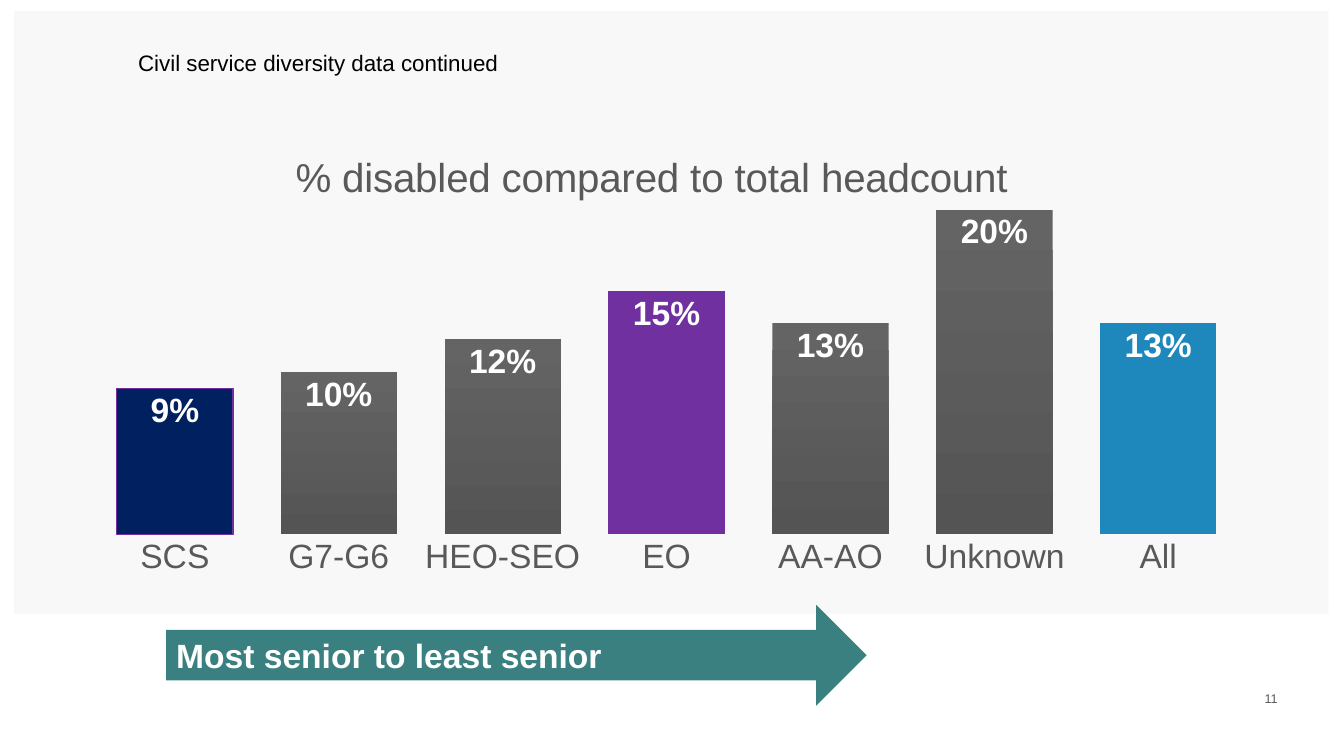
from lxml import etree
from pptx import Presentation
from pptx.chart.data import CategoryChartData
from pptx.dml.color import RGBColor
from pptx.enum.chart import XL_CHART_TYPE, XL_LABEL_POSITION, XL_TICK_MARK
from pptx.enum.shapes import MSO_SHAPE
from pptx.enum.text import MSO_ANCHOR, PP_ALIGN
from pptx.oxml.ns import qn
from pptx.util import Cm, Pt

COLUMN = XL_CHART_TYPE.COLUMN_CLUSTERED
IN_END = XL_LABEL_POSITION.INSIDE_END
NO_TICK = XL_TICK_MARK.NONE
RECT, ARROW = MSO_SHAPE.RECTANGLE, MSO_SHAPE.RIGHT_ARROW
TOP, MIDDLE = MSO_ANCHOR.TOP, MSO_ANCHOR.MIDDLE
LEFT, RIGHT = PP_ALIGN.LEFT, PP_ALIGN.RIGHT

BLACK = RGBColor(0x00, 0x00, 0x00)
WHITE = RGBColor(0xFF, 0xFF, 0xFF)
GREY = RGBColor(0x59, 0x59, 0x59)
PANEL = RGBColor(0x3F, 0x3F, 0x3F)
LIGHT = RGBColor(0x64, 0x64, 0x64)
DARK = RGBColor(0x54, 0x54, 0x54)
NAVY = RGBColor(0x00, 0x20, 0x60)
PURPLE = RGBColor(0x70, 0x30, 0xA0)
BLUE = RGBColor(0x1E, 0x88, 0xBD)
TEAL = RGBColor(0x3A, 0x80, 0x81)

HEAD = "% disabled compared to total headcount"
GRADES = {"SCS": 0.09, "G7-G6": 0.10, "HEO-SEO": 0.12, "EO": 0.15,
          "AA-AO": 0.13, "Unknown": 0.20, "All": 0.13}
ACCENTS = {"SCS": NAVY, "EO": PURPLE, "All": BLUE}


def style(font, size, color, bold=False):
    """Set the face, size, colour and weight of a font."""
    font.name, font.size, font.bold = "Arial", Pt(size), bold
    font.color.rgb = color


def write(shape, text, size, color, bold=False, align=LEFT, anchor=TOP, inset=None):
    """Write one styled run into a shape."""
    frame = shape.text_frame
    frame.word_wrap = True
    frame.vertical_anchor = anchor
    if inset is not None:
        frame.margin_left = frame.margin_right = Cm(inset)
        frame.margin_top = frame.margin_bottom = Cm(inset)
    para = frame.paragraphs[0]
    para.alignment = align
    run = para.add_run()
    run.text = text
    style(run.font, size, color, bold)


def block(slide, kind, box, color):
    """Add a flat shape without line or shadow."""
    shape = slide.shapes.add_shape(kind, *map(Cm, box))
    shape.shadow.inherit = False
    shape.fill.solid()
    shape.fill.fore_color.rgb = color
    shape.line.fill.background()
    return shape


def panel(slide, box):
    """Lay a faint grey panel behind everything else."""
    shape = block(slide, RECT, box, PANEL)
    tint = next(shape._element.iter(qn("a:srgbClr")))
    etree.SubElement(tint, qn("a:alpha"), val="3000")
    slide.shapes._spTree.insert(2, shape._element)


def title(slide, box):
    """Move the title placeholder and fill it."""
    shape = slide.shapes.title
    shape.left, shape.top, shape.width, shape.height = map(Cm, box)
    write(shape, "Civil service diversity data continued", 16, BLACK, inset=0.33)


def layout(node, index, **spot):
    """Give a chart part a manual layout in fractions of the chart."""
    old = node.find(qn("c:layout"))
    if old is not None:
        node.remove(old)
    new = etree.Element(qn("c:layout"))
    manual = etree.SubElement(new, qn("c:manualLayout"))
    for key, value in spot.items():
        etree.SubElement(manual, qn("c:" + key), val=str(value))
    node.insert(index, new)


def heading(chart):
    """Set the chart title over the plot."""
    chart.has_title = True
    label = chart.chart_title
    run = label.text_frame.paragraphs[0].add_run()
    run.text = HEAD
    style(run.font, 28.8, GREY)
    layout(label._element, 1, xMode="edge", yMode="edge", x=0.19, y=0.05)
    label._element.find(qn("c:overlay")).set("val", "1")


def axes(chart):
    """Hide the value axis and leave plain grade names."""
    value = chart.value_axis
    value.visible = value.has_major_gridlines = False
    value.minimum_scale, value.maximum_scale = 0, 0.25
    grade = chart.category_axis
    grade.major_tick_mark = grade.minor_tick_mark = NO_TICK
    grade.format.line.fill.background()
    style(grade.tick_labels.font, 24, GREY)


def bars(plot):
    """Colour the columns and label them."""
    plot.gap_width = 41
    plot.vary_by_categories = False
    series = plot.series[0]
    fill = series.format.fill
    fill.gradient()
    fill.gradient_angle = 270
    for stop, color in zip(fill.gradient_stops, (LIGHT, DARK)):
        stop.color.rgb = color
    for index, grade in enumerate(GRADES):
        if grade in ACCENTS:
            fill = series.points[index].format.fill
            fill.solid()
            fill.fore_color.rgb = ACCENTS[grade]
    edge = series.points[0].format.line
    edge.color.rgb, edge.width = PURPLE, Pt(0.75)
    labels = series.data_labels
    labels.show_value = True
    labels.position = IN_END
    labels.number_format, labels.number_format_is_linked = "0%", False
    style(labels.font, 24, WHITE, True)


def graph(slide, box):
    """Chart the disabled share of each grade."""
    data = CategoryChartData(number_format="0%")
    data.categories = list(GRADES)
    data.add_series(HEAD, list(GRADES.values()))
    chart = slide.shapes.add_chart(COLUMN, *map(Cm, box), data).chart
    chart.has_legend = False
    style(chart.font, 24, BLACK)
    heading(chart)
    axes(chart)
    bars(chart.plots[0])
    area = next(chart._chartSpace.iter(qn("c:plotArea")))
    layout(area, 0, layoutTarget="inner", xMode="edge", yMode="edge",
           x=0.03, y=0.014, w=0.94, h=0.87)


def arrow(slide, box):
    """Draw the seniority arrow."""
    shape = block(slide, ARROW, box, TEAL)
    write(shape, "Most senior to least senior", 24, WHITE, True, anchor=MIDDLE)


def number(slide, box):
    """Add the page number."""
    shape = slide.shapes.add_textbox(*map(Cm, box))
    write(shape, "11", 9, GREY, align=RIGHT, inset=0)


def main():
    """Build and save the slide."""
    deck = Presentation()
    deck.slide_width, deck.slide_height = Cm(33.87), Cm(19.05)
    slide = deck.slides.add_slide(deck.slide_layouts[5])
    panel(slide, (0.36, 0.28, 33.12, 15.19))
    title(slide, (3.15, 0.91, 20.57, 1.09))
    graph(slide, (1.42, 3.07, 30.76, 11.76))
    arrow(slide, (4.19, 15.24, 17.65, 2.54))
    number(slide, (31.34, 17.42, 0.86, 0.38))
    deck.save("out.pptx")


if __name__ == "__main__":
    main()
